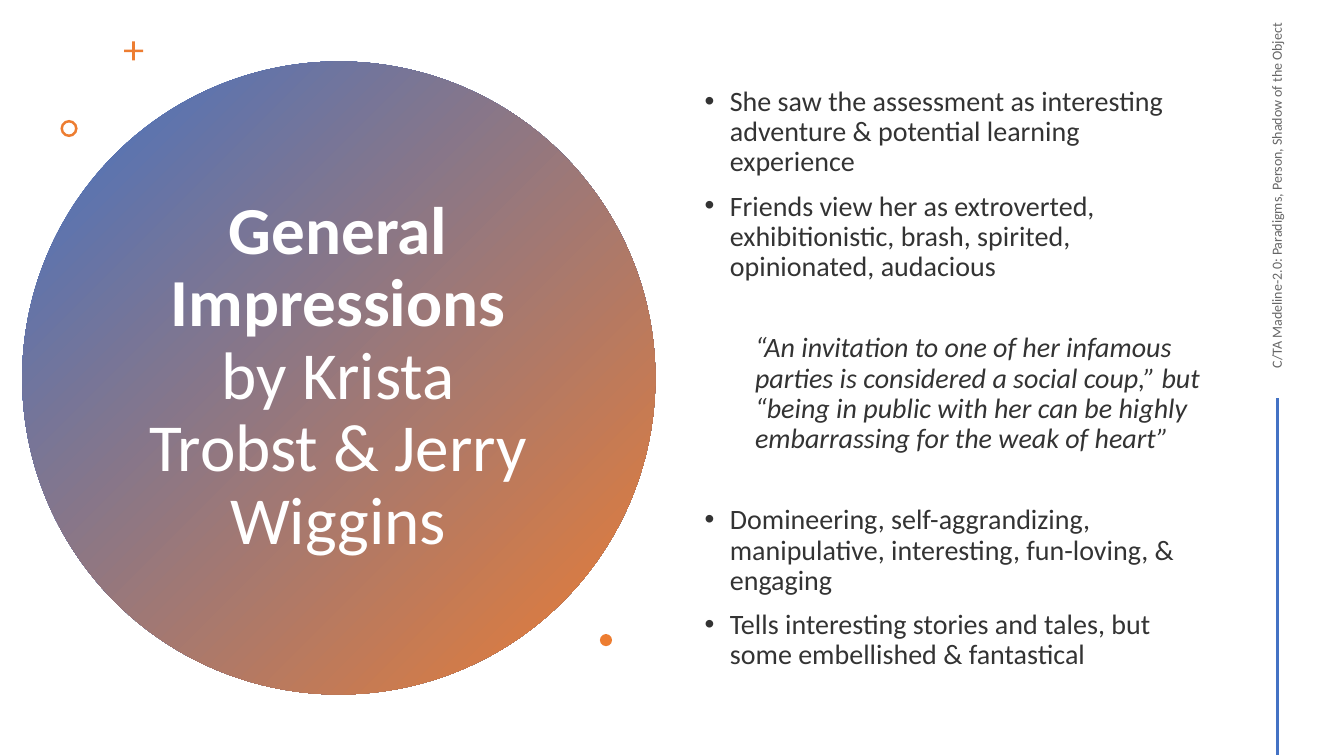
from dataclasses import dataclass

from lxml.etree import SubElement
from pptx import Presentation
from pptx.dml.color import RGBColor
from pptx.enum.shapes import MSO_CONNECTOR, MSO_SHAPE
from pptx.enum.text import MSO_ANCHOR, MSO_AUTO_SIZE, PP_ALIGN
from pptx.oxml.ns import qn
from pptx.util import Inches, Pt


@dataclass(frozen=True)
class Theme:
    font: str = "Calibri"
    blue: RGBColor = RGBColor(0x44, 0x72, 0xC4)
    orange: RGBColor = RGBColor(0xED, 0x7D, 0x31)
    white: RGBColor = RGBColor(0xFF, 0xFF, 0xFF)
    body: RGBColor = RGBColor(0x33, 0x33, 0x33)
    muted: RGBColor = RGBColor(0x66, 0x66, 0x66)
    title_size: int = 48
    body_size: int = 20
    footer_size: int = 10
    line_spacing: float = 0.9


THEME = Theme()
BULLET, QUOTE = "bullet", "quote"
IMPRESSIONS = [
    (BULLET, "She saw the assessment as interesting adventure & potential learning experience"),
    (BULLET, "Friends view her as extroverted, exhibitionistic, brash, spirited, "
             "opinionated, audacious"),
    (QUOTE, "“An invitation to one of her infamous parties is considered a social coup,” "
            "but “being in public with her can be highly embarrassing for the weak of heart”"),
    (BULLET, "Domineering, self-aggrandizing, manipulative, interesting, fun-loving, & engaging"),
    (BULLET, "Tells interesting stories and tales, but some embellished & fantastical"),
]


def add_span(para, text, size, color, bold=False, italic=False):
    span = para.add_run()
    span.text = text
    font = span.font
    font.name, font.size, font.color.rgb = THEME.font, Pt(size), color
    font.bold, font.italic = bold, italic


def prepare_frame(shape):
    frame = shape.text_frame
    frame.word_wrap = True
    frame.auto_size = MSO_AUTO_SIZE.NONE
    frame.vertical_anchor = MSO_ANCHOR.MIDDLE
    return frame


def add_text_box(page, left, top, width, height):
    return page.shapes.add_textbox(Inches(left), Inches(top), Inches(width), Inches(height))


def add_solid(page, kind, left, top, size, adjustment=None):
    shape = page.shapes.add_shape(kind, Inches(left), Inches(top), Inches(size), Inches(size))
    shape.shadow.inherit = False
    shape.fill.solid()
    shape.fill.fore_color.rgb = THEME.orange
    shape.line.fill.background()
    if adjustment is not None:
        shape.adjustments[0] = adjustment
    return shape


def add_title_circle(page, left, top, size):
    # Gradient disc, behind the title
    disc = add_solid(page, MSO_SHAPE.OVAL, left, top, size)
    disc.fill.gradient()
    disc.fill.gradient_angle = 315
    for stop, color in zip(disc.fill.gradient_stops, (THEME.blue, THEME.orange)):
        stop.color.rgb = color

    # Title
    title = page.shapes.title
    title.element.addprevious(disc.element)
    title.left, title.top = Inches(left + 1.14), Inches(top + 0.8)
    title.width, title.height = Inches(3.99), Inches(4.67)
    para = prepare_frame(title).paragraphs[0]
    para.alignment = PP_ALIGN.CENTER
    para.line_spacing = THEME.line_spacing
    add_span(para, "General Impressions", THEME.title_size, THEME.white, bold=True)
    para.add_line_break()
    add_span(para, "by Krista Trobst & Jerry Wiggins", THEME.title_size, THEME.white)

    # Small accents around the disc
    add_solid(page, MSO_SHAPE.CROSS, left + 1.01, top - 0.2, 0.19, 0.43)
    add_solid(page, MSO_SHAPE.DONUT, left + 0.38, top + 0.58, 0.17, 0.15)
    add_solid(page, MSO_SHAPE.OVAL, left + 5.73, top + 5.68, 0.12)


def format_item(para, kind):
    properties = para._p.get_or_add_pPr()
    is_bullet = kind == BULLET
    properties.set("marL", str(Inches(0.25 if is_bullet else 0.5)))
    properties.set("indent", str(Inches(-0.25 if is_bullet else 0)))
    if is_bullet:
        SubElement(properties, qn("a:buFont")).set("typeface", "Arial")
        SubElement(properties, qn("a:buChar")).set("char", "•")
    para.line_spacing = THEME.line_spacing


def add_impressions(page, left, top, width, height):
    frame = prepare_frame(add_text_box(page, left, top, width, height))
    previous = None
    for kind, text in IMPRESSIONS:
        para = frame.paragraphs[0] if previous is None else frame.add_paragraph()
        format_item(para, kind)
        # The quotation stands apart from the bullets
        if previous is not None:
            para.space_before = Pt(10 if kind == previous else 36.5)
        add_span(para, text, THEME.body_size, THEME.body, italic=kind == QUOTE)
        previous = kind


def add_side_strip(page, center, top, bottom):
    # Footer text, reading upwards
    length, depth, rule_top = 3.88, 0.4, 3.95
    footer = add_text_box(page, center - length / 2, top + (length - depth) / 2, length, depth)
    footer.rotation = 270
    para = prepare_frame(footer).paragraphs[0]
    para.alignment = PP_ALIGN.CENTER
    para.line_spacing = THEME.line_spacing
    add_span(para, "C/TA Madeline-2.0: Paradigms, Person, Shadow of the Object",
             THEME.footer_size, THEME.muted)

    # Vertical rule
    rule = page.shapes.add_connector(MSO_CONNECTOR.STRAIGHT, Inches(center), Inches(rule_top),
                                     Inches(center), Inches(bottom))
    rule.line.color.rgb = THEME.blue
    rule.line.width = Pt(2)
    SubElement(rule.element.spPr, qn("a:effectLst"))


def main():
    deck = Presentation()
    deck.slide_width, deck.slide_height = Inches(13.33), Inches(7.5)
    page = deck.slides.add_slide(deck.slide_layouts[5])
    add_title_circle(page, 0.22, 0.61, 6.28)
    add_impressions(page, 6.89, 0.57, 5.22, 6.38)
    add_side_strip(page, 12.67, 0, 7.49)
    deck.save("out.pptx")


if __name__ == "__main__":
    main()
